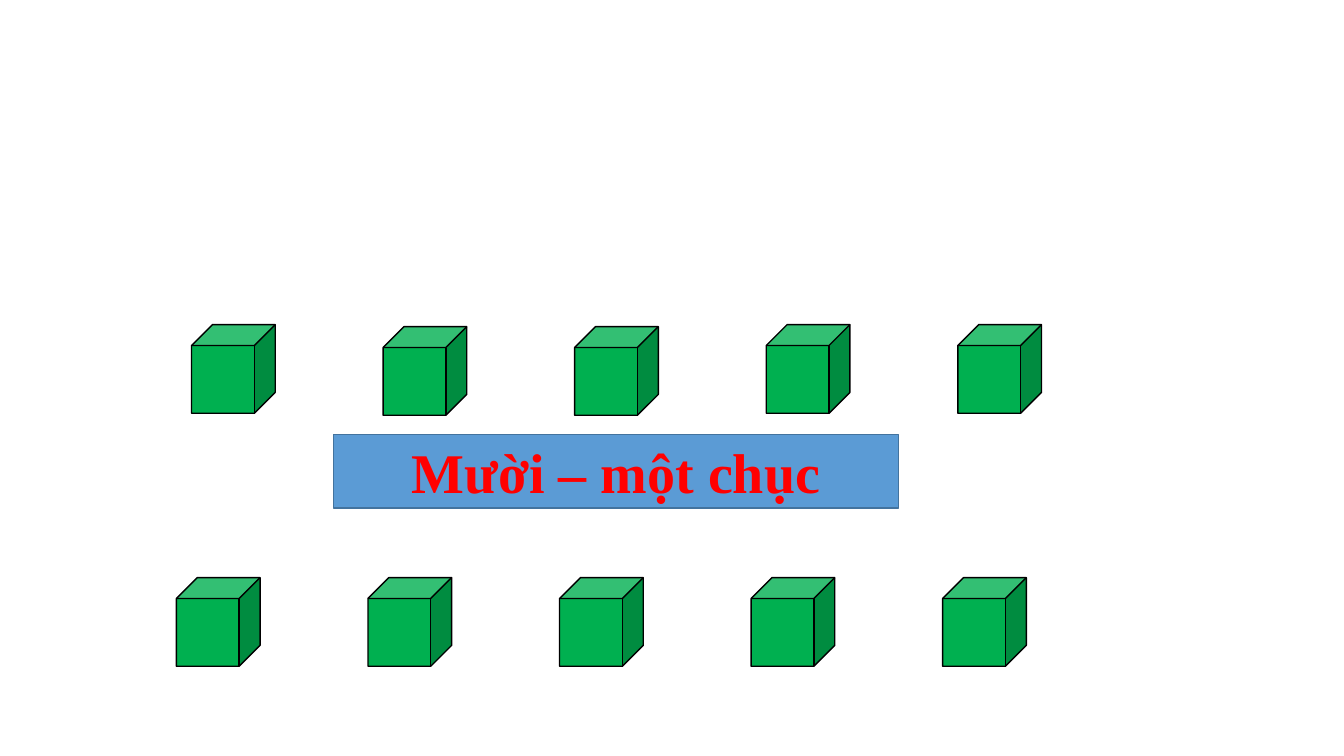
from pptx import Presentation
from pptx.dml.color import RGBColor
from pptx.enum.shapes import MSO_SHAPE
from pptx.enum.text import MSO_ANCHOR, PP_ALIGN
from pptx.util import Inches, Pt

CUBE, RECT = MSO_SHAPE.CUBE, MSO_SHAPE.RECTANGLE
MIDDLE, CENTER = MSO_ANCHOR.MIDDLE, PP_ALIGN.CENTER

GREEN = RGBColor(0x00, 0xB0, 0x50)
BLACK = RGBColor(0x00, 0x00, 0x00)
BLUE = RGBColor(0x5B, 0x9B, 0xD5)
DARK_BLUE = RGBColor(0x43, 0x73, 0x9E)
RED = RGBColor(0xFF, 0x00, 0x00)

LABEL = "Mười – một chục"
LABEL_BOX = (3.31, 4.31, 5.6, 0.73)
LABEL_FONT = {"name": "Times New Roman", "size": Pt(40), "bold": True}

# Each row of cubes: left edge, then the top of every cube
CUBE_ROWS = [
    (1.9, (3.22, 3.24, 3.24, 3.22, 3.22)),
    (1.75, (5.73,) * 5),
]
CUBE_SIZE = (0.83, 0.88)
CUBE_STEP = 1.9


def add_block(s, kind, box, fill, line):
    shape = s.shapes.add_shape(kind, *map(Inches, box))
    shape.shadow.inherit = False
    shape.fill.solid()
    shape.fill.fore_color.rgb = fill
    shape.line.color.rgb = line
    shape.line.width = Pt(1)
    return shape


def main():
    prs = Presentation()
    prs.slide_width, prs.slide_height = Inches(13.33), Inches(7.5)
    s = prs.slides.add_slide(prs.slide_layouts[6])

    for left, tops in CUBE_ROWS:
        for col, top in enumerate(tops):
            box = (left + col * CUBE_STEP, top, *CUBE_SIZE)
            add_block(s, CUBE, box, GREEN, BLACK)

    label = add_block(s, RECT, LABEL_BOX, BLUE, DARK_BLUE)
    tf = label.text_frame
    tf.word_wrap = True
    tf.vertical_anchor = MIDDLE
    p = tf.paragraphs[0]
    p.alignment = CENTER
    r = p.add_run()
    r.text = LABEL
    for name, value in LABEL_FONT.items():
        setattr(r.font, name, value)
    r.font.color.rgb = RED

    prs.save("out.pptx")


if __name__ == "__main__":
    main()
